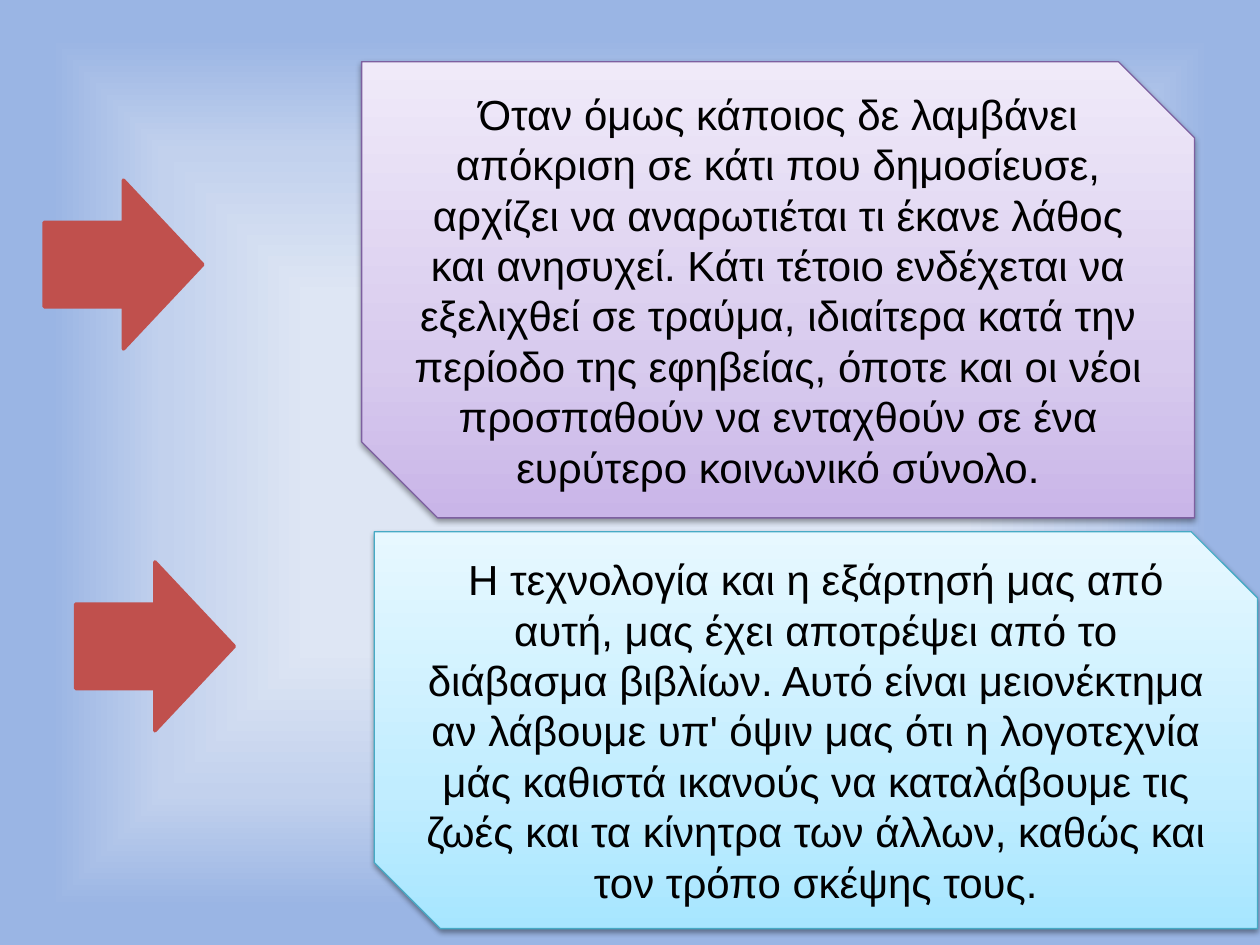
from lxml.etree import SubElement
from pptx import Presentation
from pptx.dml.color import RGBColor
from pptx.enum.shapes import MSO_SHAPE
from pptx.enum.text import MSO_ANCHOR, PP_ALIGN
from pptx.oxml.ns import qn
from pptx.util import Inches, Pt

COLORS = {"text": "000000", "shadow": "000000", "arrow": "C0504D",
          "purple_edge": "7D60A0", "blue_edge": "46AAC5"}

# Gradient stops: (position in percent, colour)
BACKDROP = [(4, "E1E8F5"), (37, "DEE6F4"), (68, "C2D1ED"), (92, "9AB5E4")]
PURPLE = [(0, "C9B5E8"), (35, "D8CBEE"), (100, "F0EAF9")]
BLUE = [(0, "A7E6FF"), (35, "C1EDFF"), (100, "E7F8FF")]

# Each point: statement, its card and the place of its arrow, in inches
POINTS = [
    {"statement": "Όταν όμως κάποιος δε λαμβάνει απόκριση σε κάτι που δημοσίευσε, "
                  "αρχίζει να αναρωτιέται τι έκανε λάθος και ανησυχεί. Κάτι τέτοιο "
                  "ενδέχεται να εξελιχθεί σε τραύμα, ιδιαίτερα κατά την περίοδο της "
                  "εφηβείας, όποτε και οι νέοι προσπαθούν να ενταχθούν σε ένα "
                  "ευρύτερο κοινωνικό σύνολο.",
     "card": (2.87, 0.49, 6.61, 3.62), "stops": PURPLE, "edge": "purple_edge",
     "arrow": (0.35, 1.43)},
    {"statement": "Η τεχνολογία και η εξάρτησή μας από αυτή, μας έχει αποτρέψει από "
                  "το διάβασμα βιβλίων. Αυτό είναι μειονέκτημα αν λάβουμε υπ' όψιν "
                  "μας ότι η λογοτεχνία μάς καθιστά ικανούς να καταλάβουμε τις ζωές "
                  "και τα κίνητρα των άλλων, καθώς και τον τρόπο σκέψης τους.",
     "card": (2.97, 4.22, 7.01, 3.15), "stops": BLUE, "edge": "blue_edge",
     "arrow": (0.6, 4.46)},
]
ARROW_SIZE = (1.26, 1.34)


def color(name):
    return RGBColor.from_string(COLORS[name])


def set_gradient(fill, owner, stops, angle=None):
    """Linear gradient at an angle, or one that closes in on the centre."""
    fill.gradient()
    gradient = owner.find(".//" + qn("a:gradFill"))
    for child in list(gradient):
        gradient.remove(child)
    stop_list = SubElement(gradient, qn("a:gsLst"))
    for position, rgb in stops:
        stop = SubElement(stop_list, qn("a:gs"), pos=str(position * 1000))
        SubElement(stop, qn("a:srgbClr"), val=rgb)
    if angle is None:
        path = SubElement(gradient, qn("a:path"), path="shape")
        SubElement(path, qn("a:fillToRect"), **dict.fromkeys("ltrb", "50000"))
    else:
        SubElement(gradient, qn("a:lin"), ang=str(angle * 60000), scaled="1")


def add_shadow(card):
    effects = card._element.spPr.find(qn("a:effectLst"))
    shadow = SubElement(effects, qn("a:outerShdw"), blurRad=str(Pt(3.1)),
                        dist=str(Pt(1.6)), dir=str(90 * 60000), rotWithShape="0")
    shade = SubElement(shadow, qn("a:srgbClr"), val=COLORS["shadow"])
    SubElement(shade, qn("a:alpha"), val="38000")


def add_outlined(slide, kind, box, edge, width):
    outlined = slide.shapes.add_shape(kind, *map(Inches, box))
    outlined.line.color.rgb = color(edge)
    outlined.line.width = Pt(width)
    outlined.shadow.inherit = False
    return outlined


def write(frame, text, size=24, font="Arial", ink="text", after=14.1):
    frame.word_wrap = True
    frame.vertical_anchor = MSO_ANCHOR.MIDDLE
    paragraph = frame.paragraphs[0]
    paragraph.alignment = PP_ALIGN.CENTER
    paragraph.space_after = Pt(after)
    run = paragraph.add_run()
    run.text = text
    run.font.size = Pt(size)
    run.font.name = font
    run.font.color.rgb = color(ink)


def main():
    deck = Presentation()
    deck.slide_width, deck.slide_height = Inches(10), Inches(7.5)
    slide = deck.slides.add_slide(deck.slide_layouts[6])
    set_gradient(slide.background.fill, slide._element, BACKDROP)

    # Statement cards
    for point in POINTS:
        card = add_outlined(slide, MSO_SHAPE.SNIP_2_DIAG_RECTANGLE,
                            point["card"], point["edge"], 0.75)
        set_gradient(card.fill, card._element.spPr, point["stops"], angle=270)
        add_shadow(card)
        write(card.text_frame, point["statement"])

    # Arrows pointing at the cards
    for point in POINTS:
        arrow = add_outlined(slide, MSO_SHAPE.RIGHT_ARROW,
                             point["arrow"] + ARROW_SIZE, "arrow", 2)
        arrow.fill.solid()
        arrow.fill.fore_color.rgb = color("arrow")
        SubElement(arrow._element.spPr.find(qn("a:ln")), qn("a:round"))

    deck.save("out.pptx")


if __name__ == "__main__":
    main()
